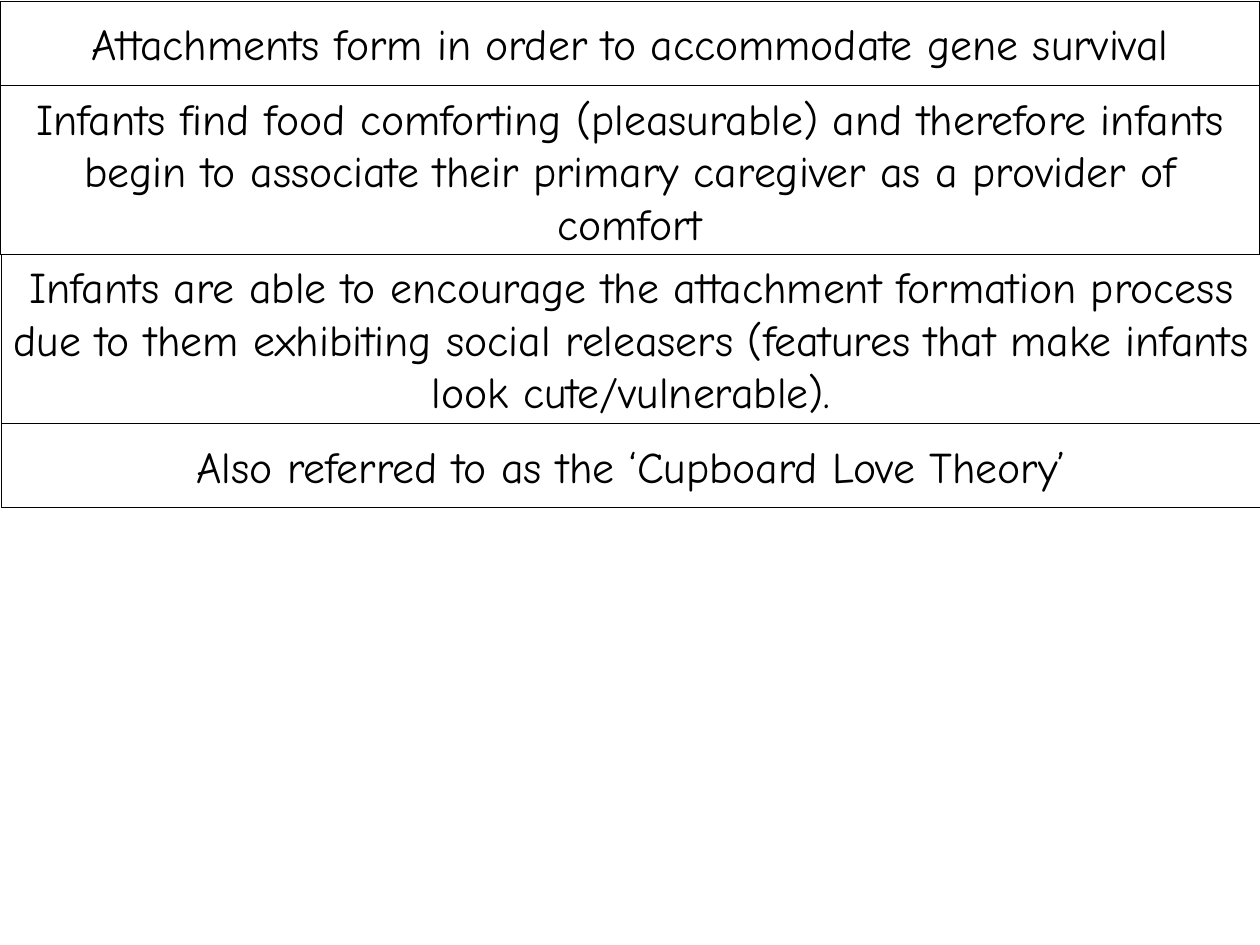
from pptx import Presentation
from pptx.dml.color import RGBColor
from pptx.enum.text import MSO_ANCHOR as Anchor, PP_ALIGN as Align
from pptx.util import Pt

COLOURS = {"ink": "000000"}
WIDTH, HEIGHT = 720, 540
ROW_HEIGHT = 48.24
NUDGE = 0.72

STATEMENTS = [
    (0, 1, "Attachments form in order to accommodate gene survival"),
    (0, 2, "Infants find food comforting (pleasurable) and therefore infants begin "
           "to associate their primary caregiver as a provider of comfort"),
    (NUDGE, 2, "Infants are able to encourage the attachment formation process due to "
               "them exhibiting social releasers (features that make infants look "
               "cute/vulnerable)."),
    (NUDGE, 1, "Also referred to as the ‘Cupboard Love Theory’"),
]


class StatementSlide:
    """Holds the text style and the slide that receives the statements."""

    font_name = "Comic Neue"
    font_size = 25
    line_width = 0.75
    side_margin = 6

    def __init__(self, slide):
        self.slide = slide

    def statement(self, left, top, height, text):
        shape = self.slide.shapes.add_textbox(Pt(left), Pt(top), Pt(WIDTH), Pt(height))
        shape.line.color.rgb = RGBColor.from_string(COLOURS["ink"])
        shape.line.width = Pt(self.line_width)
        frame = shape.text_frame
        frame.word_wrap = True
        frame.vertical_anchor = Anchor.MIDDLE
        frame.margin_left = frame.margin_right = Pt(self.side_margin)
        paragraph = frame.paragraphs[0]
        paragraph.alignment = Align.CENTER
        run = paragraph.add_run()
        run.text = text
        run.font.name = self.font_name
        run.font.size = Pt(self.font_size)
        run.font.color.rgb = RGBColor.from_string(COLOURS["ink"])


def main():
    presentation = Presentation()
    presentation.slide_width, presentation.slide_height = Pt(WIDTH), Pt(HEIGHT)
    page = StatementSlide(presentation.slides.add_slide(presentation.slide_layouts[6]))
    top = NUDGE
    for left, rows, text in STATEMENTS:
        height = rows * ROW_HEIGHT
        page.statement(left, top, height, text)
        top += height
    presentation.save("out.pptx")


if __name__ == "__main__":
    main()
